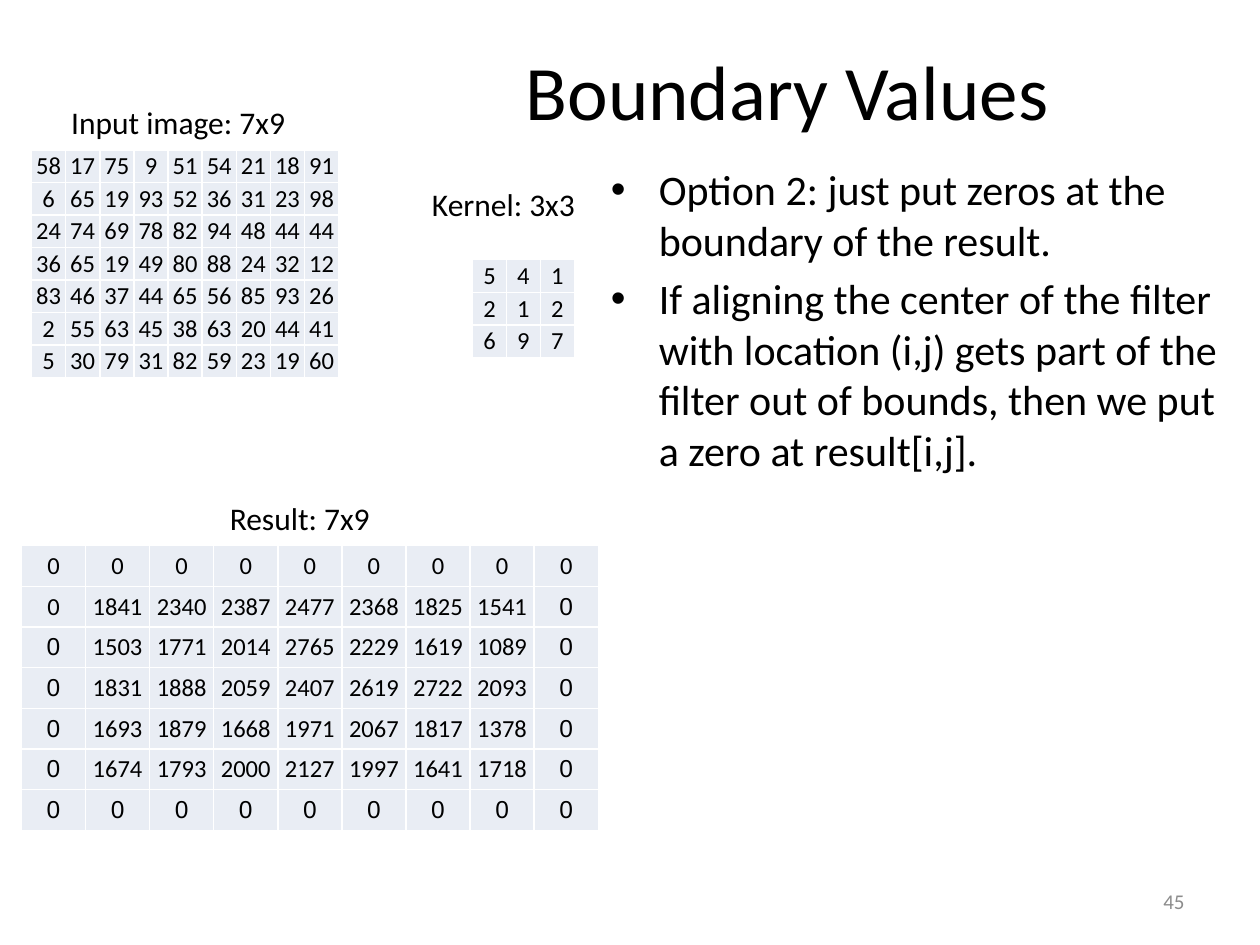
import pptx
import pptx.dml.color
import pptx.enum.text
import pptx.oxml.ns
import pptx.util
from lxml import etree

Inches = pptx.util.Inches
Pt = pptx.util.Pt
ALIGN = pptx.enum.text.PP_ALIGN
ANCHOR = pptx.enum.text.MSO_ANCHOR

COLORS = {"text": "000000", "number": "8C8C8C", "cell": "E9EDF4", "border": "FFFFFF"}

TITLE = "Boundary Values"
BULLETS = [
    "Option 2: just put zeros at the boundary of the result.",
    "If aligning the center of the filter with location (i,j) gets part of the "
    "filter out of bounds, then we put a zero at result[i,j].",
]
SLIDE_NUMBER = "45"
CAPTIONS = [
    ("Result: 7x9", (1.65, 3.91, 1.46, 0.4), ALIGN.CENTER),
    ("Input image: 7x9", (0.38, 0.77, 2.07, 0.4), ALIGN.CENTER),
    ("Kernel: 3x3", (3.33, 1.42, 1.35, 0.4), ALIGN.LEFT),
]

INPUT_IMAGE = [
    [58, 17, 75, 9, 51, 54, 21, 18, 91],
    [6, 65, 19, 93, 52, 36, 31, 23, 98],
    [24, 74, 69, 78, 82, 94, 48, 44, 44],
    [36, 65, 19, 49, 80, 88, 24, 32, 12],
    [83, 46, 37, 44, 65, 56, 85, 93, 26],
    [2, 55, 63, 45, 38, 63, 20, 44, 41],
    [5, 30, 79, 31, 82, 59, 23, 19, 60],
]
KERNEL = [[5, 4, 1], [2, 1, 2], [6, 9, 7]]
RESULT_INTERIOR = [
    [1841, 2340, 2387, 2477, 2368, 1825, 1541],
    [1503, 1771, 2014, 2765, 2229, 1619, 1089],
    [1831, 1888, 2059, 2407, 2619, 2722, 2093],
    [1693, 1879, 1668, 1971, 2067, 1817, 1378],
    [1674, 1793, 2000, 2127, 1997, 1641, 1718],
]
ZERO_ROW = [0] * 9
RESULT = [ZERO_ROW] + [[0] + row + [0] for row in RESULT_INTERIOR] + [ZERO_ROW]
FIRST_ARIAL_ZERO = (1, 8)

MATRICES = [
    (RESULT, (0.17, 4.33, 4.58, 2.26)),
    (INPUT_IMAGE, (0.25, 1.19, 2.44, 1.81)),
    (KERNEL, (3.75, 2.06, 0.81, 0.78)),
]


def format_paragraph(paragraph, size, alignment, color="text", font="Calibri"):
    paragraph.alignment = alignment
    for run in paragraph.runs:
        run.font.size = Pt(size)
        run.font.name = font
        run.font.color.rgb = pptx.dml.color.RGBColor.from_string(COLORS[color])


def add_text(slide, lines, box, size, alignment, anchor=ANCHOR.TOP, color="text", wrap=True):
    shape = slide.shapes.add_textbox(*map(Inches, box))
    frame = shape.text_frame
    frame.text = "\n".join(lines)
    frame.word_wrap = wrap
    frame.vertical_anchor = anchor
    for paragraph in frame.paragraphs:
        format_paragraph(paragraph, size, alignment, color)
    return shape


def add_bullet(paragraph, size):
    paragraph.space_before = Pt(size * 0.2)
    properties = paragraph._p.get_or_add_pPr()
    properties.set("marL", str(Inches(0.38)))
    properties.set("indent", str(Inches(-0.38)))
    qn = pptx.oxml.ns.qn
    etree.SubElement(properties, qn("a:buFont"), typeface="Arial")
    etree.SubElement(properties, qn("a:buChar"), char="•")


def add_borders(cell):
    qn = pptx.oxml.ns.qn
    properties = cell._tc.get_or_add_tcPr()
    for side in ("a:lnL", "a:lnR", "a:lnT", "a:lnB"):
        line = etree.SubElement(properties, qn(side), w=str(Pt(1)))
        fill = etree.SubElement(line, qn("a:solidFill"))
        etree.SubElement(fill, qn("a:srgbClr"), val=COLORS["border"])


def add_matrix(slide, values, box):
    left, top, width, height = box
    rows, columns = len(values), len(values[0])
    table = slide.shapes.add_table(rows, columns, *map(Inches, box)).table
    table.first_row = False
    table.horz_banding = False
    for column in table.columns:
        column.width = Inches(width / columns)
    for row in table.rows:
        row.height = Inches(height / rows)
    for i, row_values in enumerate(values):
        for j, value in enumerate(row_values):
            cell = table.cell(i, j)
            cell.text_frame.text = str(value)
            cell.margin_left = cell.margin_right = 0
            cell.margin_top = cell.margin_bottom = 0
            cell.vertical_anchor = ANCHOR.MIDDLE
            add_borders(cell)
            cell.fill.solid()
            cell.fill.fore_color.rgb = pptx.dml.color.RGBColor.from_string(COLORS["cell"])
            font = "Arial" if value == 0 and (i, j) >= FIRST_ARIAL_ZERO else "Calibri"
            format_paragraph(cell.text_frame.paragraphs[0], 14, ALIGN.CENTER, font=font)


def main():
    presentation = pptx.Presentation()
    presentation.slide_width = Inches(10)
    presentation.slide_height = Inches(7.5)
    slide = presentation.slides.add_slide(presentation.slide_layouts[6])

    add_text(slide, [TITLE], (3, 0.17, 6.5, 1.08), 44, ALIGN.CENTER, ANCHOR.MIDDLE)
    body = add_text(slide, BULLETS, (4.75, 1.25, 5.08, 5.67), 24, ALIGN.LEFT)
    for paragraph in body.text_frame.paragraphs:
        add_bullet(paragraph, 24)
    add_text(slide, [SLIDE_NUMBER], (7.17, 6.95, 2.33, 0.4), 12, ALIGN.RIGHT,
             ANCHOR.MIDDLE, "number")

    for values, box in MATRICES:
        add_matrix(slide, values, box)
    for caption, box, alignment in CAPTIONS:
        shape = add_text(slide, [caption], box, 18, alignment, wrap=False)
        shape.text_frame.auto_size = pptx.enum.text.MSO_AUTO_SIZE.SHAPE_TO_FIT_TEXT

    presentation.save("out.pptx")


if __name__ == "__main__":
    main()
